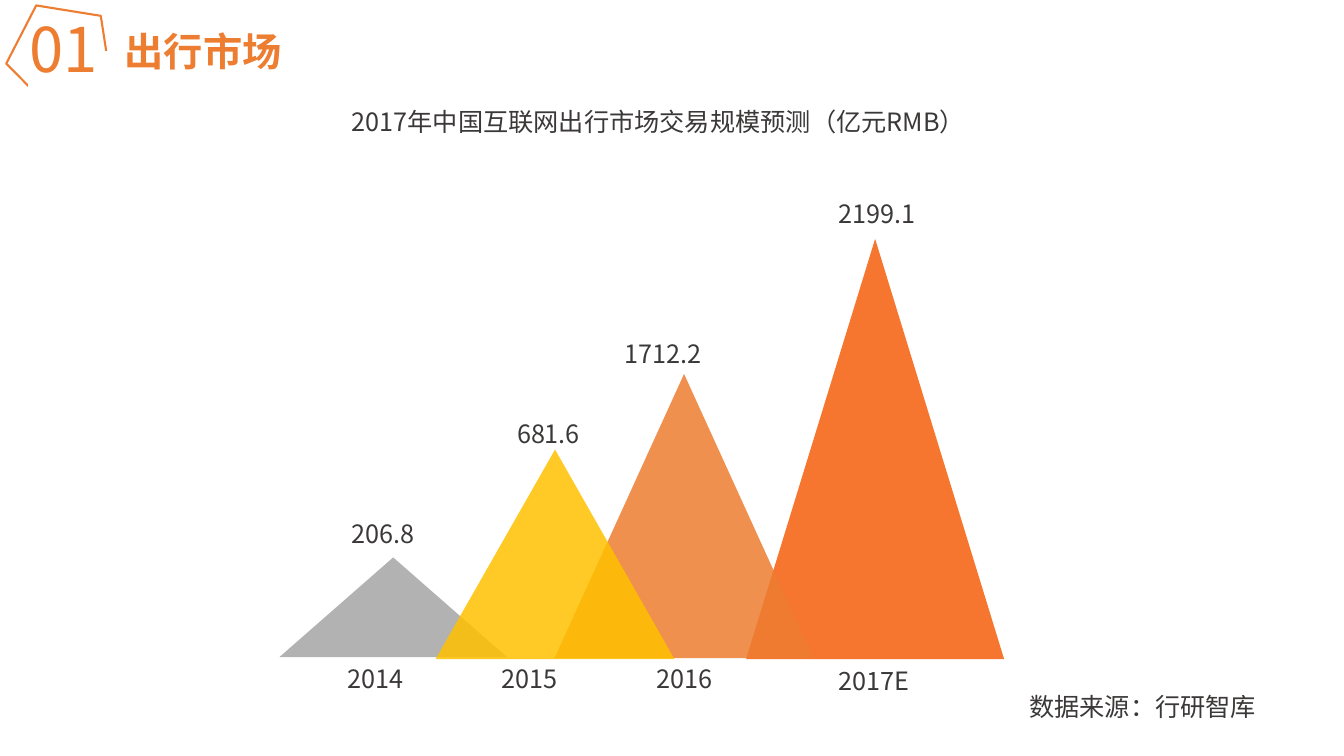
from pptx import Presentation
from pptx.dml.color import RGBColor
from pptx.enum.shapes import MSO_SHAPE as Shape
from pptx.enum.text import PP_ALIGN as Align
from pptx.oxml.ns import qn
from pptx.util import Pt
from lxml.etree import SubElement

PX = 9144
FONT = "Noto Sans CJK SC"
ORANGE, DARK, WHITE = "ED7D31", "3B3838", "FFFFFF"
PEAKS = [
    ((740, 237, 256, 417), "F55F0B"),
    ((550, 371, 257, 282), ORANGE),
    ((277, 553, 226, 99), "A5A5A5"),
    ((432, 446, 237, 208), "FFC000"),
]
LABELS = [
    ("2014", (335, 653, 103, 47)),
    ("2015", (488, 653, 103, 47)),
    ("2016", (641, 653, 103, 47)),
    ("2017E", (822, 655, 122, 47)),
    ("2017年中国互联网出行市场交易规模预测（亿元RMB）", (339, 101, 838, 47)),
    ("2199.1", (822, 192, 131, 47)),
    ("1712.2", (610, 331, 131, 47)),
    ("681.6", (503, 410, 111, 47)),
    ("206.8", (339, 509, 111, 47)),
    ("数据来源：行研智库", (1011, 681, 250, 40)),
]


def color(value):
    """Turn a hex string into a colour."""
    return RGBColor.from_string(value)


def scale(frame):
    """Turn pixel lengths into EMU."""
    return [length * PX for length in frame]


def add_figure(page, kind, frame, fill=None, line=None, weight=1, alpha=100):
    """Add a preset shape with an optional fill, outline and opacity."""
    figure = page.shapes.add_shape(kind, *scale(frame))
    figure.shadow.inherit = False
    if fill:
        figure.fill.solid()
        figure.fill.fore_color.rgb = color(fill)
        if alpha < 100:
            tint = figure.fill._xPr.find(qn("a:solidFill"))[0]
            SubElement(tint, qn("a:alpha"), val=str(alpha * 1000))
    else:
        figure.fill.background()
    if line:
        figure.line.color.rgb = color(line)
        figure.line.width = Pt(weight)
    else:
        figure.line.fill.background()
    return figure


def add_text(page, text, frame, size=18, ink=DARK, bold=False, align=Align.LEFT):
    """Add a one-line text box."""
    box = page.shapes.add_textbox(*scale(frame))
    box.text_frame.word_wrap = True
    box.text_frame.text = text
    para = box.text_frame.paragraphs[0]
    para.alignment = align
    span = para.runs[0]
    span.font.size = Pt(size)
    span.font.bold = bold
    span.font.color.rgb = color(ink)
    span.font.name = FONT
    SubElement(span.font._element, qn("a:ea"), typeface=FONT)


def add_heading(page):
    """Add the section number in its open pentagon and the section title."""
    pentagon = add_figure(page, Shape.REGULAR_PENTAGON, (12, 1, 105, 100), line=ORANGE, weight=1.5)
    pentagon.rotation = 45.2
    add_figure(page, Shape.RECTANGLE, (28, 51, 211, 67), fill=WHITE, line=WHITE)
    add_text(page, "01", (10, 6, 106, 84), 44, ORANGE, align=Align.CENTER)
    add_text(page, "出行市场", (114, 22, 340, 57), 28, ORANGE, bold=True)


def main():
    """Build and save the slide."""
    deck = Presentation()
    deck.slide_width, deck.slide_height = scale((1333, 750))
    page = deck.slides.add_slide(deck.slide_layouts[6])
    for frame, fill in PEAKS:
        add_figure(page, Shape.ISOSCELES_TRIANGLE, frame, fill, alpha=85)
    for text, frame in LABELS:
        add_text(page, text, frame)
    add_heading(page)
    deck.save("out.pptx")


if __name__ == "__main__":
    main()
